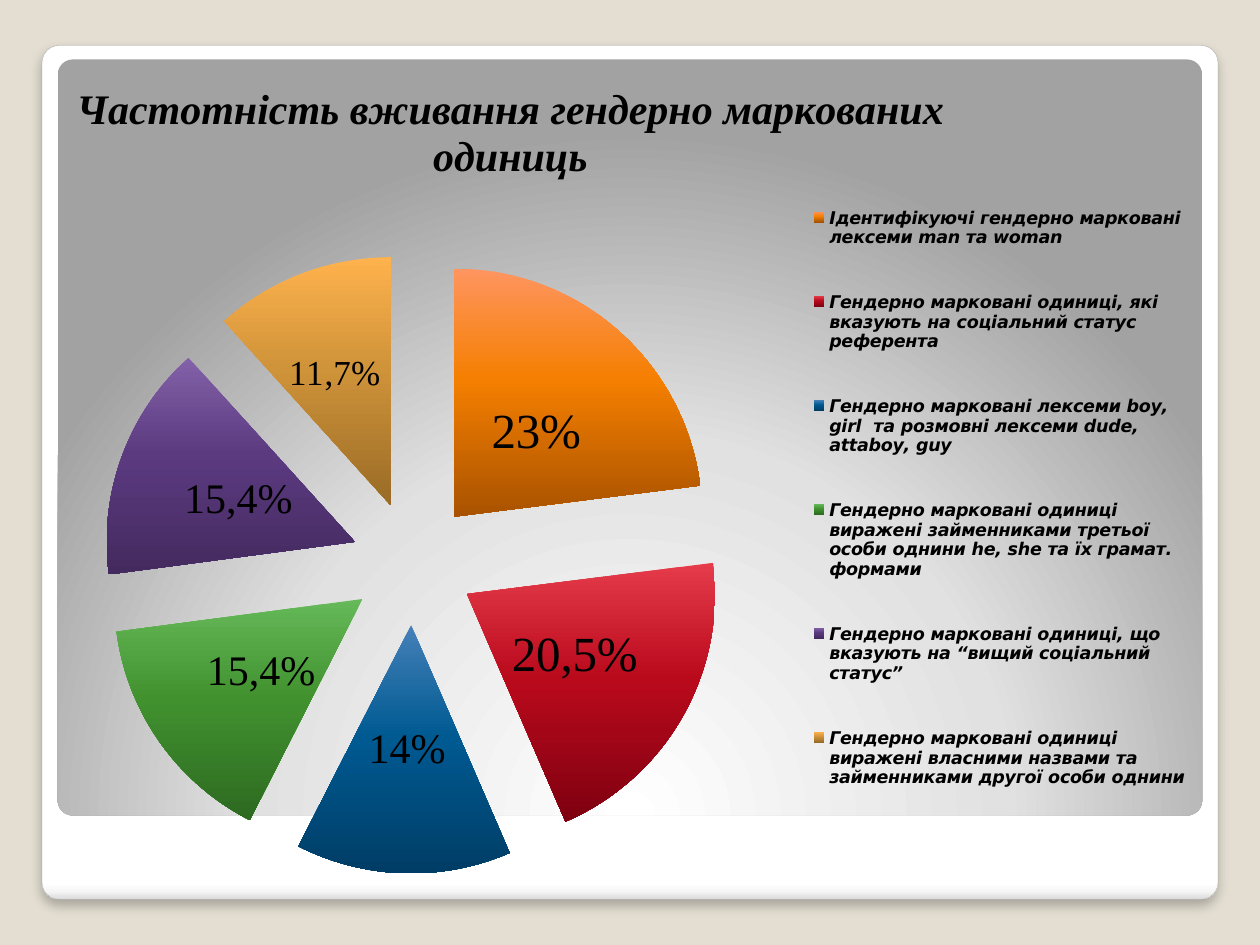
from lxml.etree import SubElement
from pptx import Presentation
from pptx.chart.data import CategoryChartData
from pptx.dml.color import RGBColor
from pptx.enum.chart import XL_CHART_TYPE, XL_LABEL_POSITION, XL_LEGEND_POSITION
from pptx.enum.shapes import MSO_SHAPE
from pptx.oxml.ns import qn
from pptx.util import Pt

SERIF, SANS = "Times New Roman", "DejaVu Sans"
TITLE = "Частотність вживання гендерно маркованих одиниць"
# category, value, label, label size, gradient from top to bottom
SLICES = [
    ("Ідентифікуючі гендерно марковані лексеми man та woman",
     23, "23%", 28, ("FF9560", "F57F00", "A85200")),
    ("Гендерно марковані одиниці, які вказують на соціальний статус референта",
     20.5, "20,5%", 28, ("E53B4A", "B90A1C", "7E0010")),
    ("Гендерно марковані лексеми boy, girl  та розмовні лексеми dude, attaboy, guy",
     14, "14%", 24, ("4580B8", "005A92", "003D66")),
    ("Гендерно марковані одиниці виражені займенниками третьої особи однини "
     "he, she та їх грамат. формами",
     15.4, "15,4%", 24, ("66B959", "41912F", "2D6A20")),
    ("Гендерно марковані одиниці, що вказують на “вищий соціальний статус”",
     15.4, "15,4%", 24, ("8361A8", "5B3A80", "432A5E")),
    ("Гендерно марковані одиниці виражені власними назвами та займенниками "
     "другої особи однини",
     11.7, "11,7%", 20, ("FFB24D", "CF9339", "996B26")),
]
LABEL_SHIFTS = {0: (0, 0.01), 5: (-0.01, -0.02)}


def color(value):
    return RGBColor.from_string(value)


def set_gradient(fill, stops):
    """Fill downwards with (percent, colour) stops and return the gradient element."""
    fill.gradient()
    fill.gradient_angle = 270
    gradient = fill._xPr.find(qn("a:gradFill"))
    stop_list = gradient.find(qn("a:gsLst"))
    for stop in list(stop_list):
        stop_list.remove(stop)
    for percent, value in stops:
        stop = SubElement(stop_list, qn("a:gs"), pos=str(percent * 1000))
        SubElement(stop, qn("a:srgbClr"), val=value)
    return gradient


def make_radial(gradient, left, top, right, bottom):
    gradient.remove(gradient.find(qn("a:lin")))
    circle = SubElement(gradient, qn("a:path"), path="circle")
    SubElement(circle, qn("a:fillToRect"), l=str(left * 1000), t=str(top * 1000),
               r=str(right * 1000), b=str(bottom * 1000))


def add_soft_shadow(shape):
    shape.shadow.inherit = False
    effects = shape._element.spPr.find(qn("a:effectLst"))
    shadow = SubElement(effects, qn("a:outerShdw"), blurRad=str(Pt(6)), dist=str(Pt(4)),
                        dir="5400000", algn="t", rotWithShape="0")
    black = SubElement(shadow, qn("a:srgbClr"), val="000000")
    SubElement(black, qn("a:alpha"), val="25000")


def add_panel(slide, left, top, width, height):
    shape = slide.shapes.add_shape(MSO_SHAPE.ROUNDED_RECTANGLE,
                                   Pt(left), Pt(top), Pt(width), Pt(height))
    shape.adjustments[0] = 0.02
    shape.shadow.inherit = False
    shape.line.fill.background()
    return shape


def add_frame(slide, left, top, width, height):
    """Place the white card and the grey panel inside it."""
    card = add_panel(slide, left, top, width, height)
    set_gradient(card.fill, [(0, "FFFFFF"), (98, "FFFFFF"), (99, "F7F7F7"), (100, "DADADA")])
    card.line.color.rgb = color("A4A4A4")
    card.line.width = Pt(0.16)
    add_soft_shadow(card)
    panel = add_panel(slide, left + 9, top + 8, width - 18, 432)
    gradient = set_gradient(panel.fill, [(0, "FFFFFF"), (55, "E1E1E1"), (100, "A2A2A2")])
    make_radial(gradient, 50, 175, 50, -75)


def set_font(font, name, size, bold=False, italic=False):
    font.name, font.size, font.bold, font.italic = name, Pt(size), bold, italic
    font.color.rgb = color("000000")


def set_layout(element, before, mode="edge", inner=False, **fractions):
    """Set a manual layout, in fractions of the chart, ahead of the named siblings."""
    for old in element.findall(qn("c:layout")):
        element.remove(old)
    layout = SubElement(element, qn("c:layout"))
    follower = next((child for child in element if child.tag in map(qn, before)), None)
    if follower is not None:
        follower.addprevious(layout)
    manual = SubElement(layout, qn("c:manualLayout"))
    if inner:
        SubElement(manual, qn("c:layoutTarget"), val="inner")
    for axis in ("x", "y"):
        SubElement(manual, qn(f"c:{axis}Mode"), val=mode)
    for name, value in fractions.items():
        SubElement(manual, qn(f"c:{name}"), val=str(value))


def add_pie(slide, left, top, width, height):
    data = CategoryChartData()
    data.categories = [category for category, *_ in SLICES]
    data.add_series("Series 1", [value for _, value, *_ in SLICES])
    chart = slide.shapes.add_chart(XL_CHART_TYPE.PIE_EXPLODED, Pt(left), Pt(top),
                                   Pt(width), Pt(height), data).chart
    set_font(chart.font, SANS, 18)

    chart.has_title = True
    run = chart.chart_title.text_frame.paragraphs[0].add_run()
    run.text = TITLE
    set_font(run.font, SERIF, 24, bold=True, italic=True)
    set_layout(chart.chart_title._element, ["c:overlay"], x=0, y=0)

    chart.has_legend = True
    legend = chart.legend
    legend.position = XL_LEGEND_POSITION.RIGHT
    legend.include_in_layout = False
    set_font(legend.font, SANS, 10, bold=True, italic=True)
    set_layout(legend._element, ["c:overlay", "c:spPr", "c:txPr"],
               x=0.67, y=0.11, w=0.33, h=0.82)

    plot = chart.plots[0]
    plot.vary_by_categories = True
    set_layout(plot._element.getparent(), ["c:pieChart"], inner=True,
               x=0.03, y=0.22, w=0.55, h=0.76)

    series = plot.series[0]
    for explosion in series._element.findall(qn("c:explosion")):
        explosion.set("val", "25")
    labels = series.data_labels
    labels.show_value = True
    labels.show_percentage = False
    labels.position = XL_LABEL_POSITION.CENTER
    set_font(labels.font, SERIF, 16)
    for index, (_, _, text, size, shades) in enumerate(SLICES):
        point = series.points[index]
        set_gradient(point.format.fill, zip((0, 45, 100), shades))
        point.format.line.fill.background()
        label = point.data_label
        run = label.text_frame.paragraphs[0].add_run()
        run.text = text
        set_font(run.font, SERIF, size)
        label.position = XL_LABEL_POSITION.CENTER
        if index in LABEL_SHIFTS:
            shift_x, shift_y = LABEL_SHIFTS[index]
            element = labels._element.findall(qn("c:dLbl"))[index]
            set_layout(element, ["c:tx"], mode="factor", x=shift_x, y=shift_y)


def main():
    presentation = Presentation()
    presentation.slide_width, presentation.slide_height = Pt(720), Pt(540)
    slide = presentation.slides.add_slide(presentation.slide_layouts[6])
    slide.background.fill.solid()
    slide.background.fill.fore_color.rgb = color("E3DED1")
    add_frame(slide, 24, 26, 672, 488)
    add_pie(slide, 39.5, 42, 644.5, 466.5)
    presentation.save("out.pptx")


if __name__ == "__main__":
    main()
